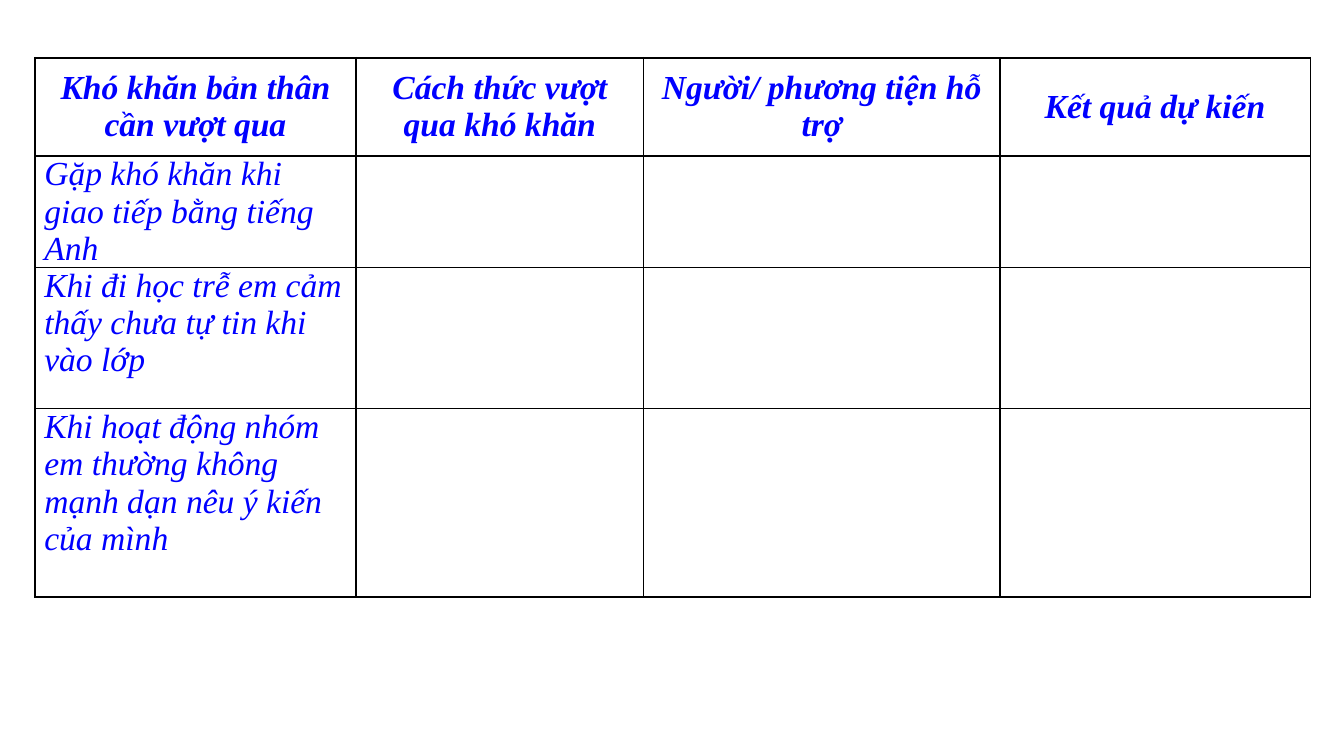
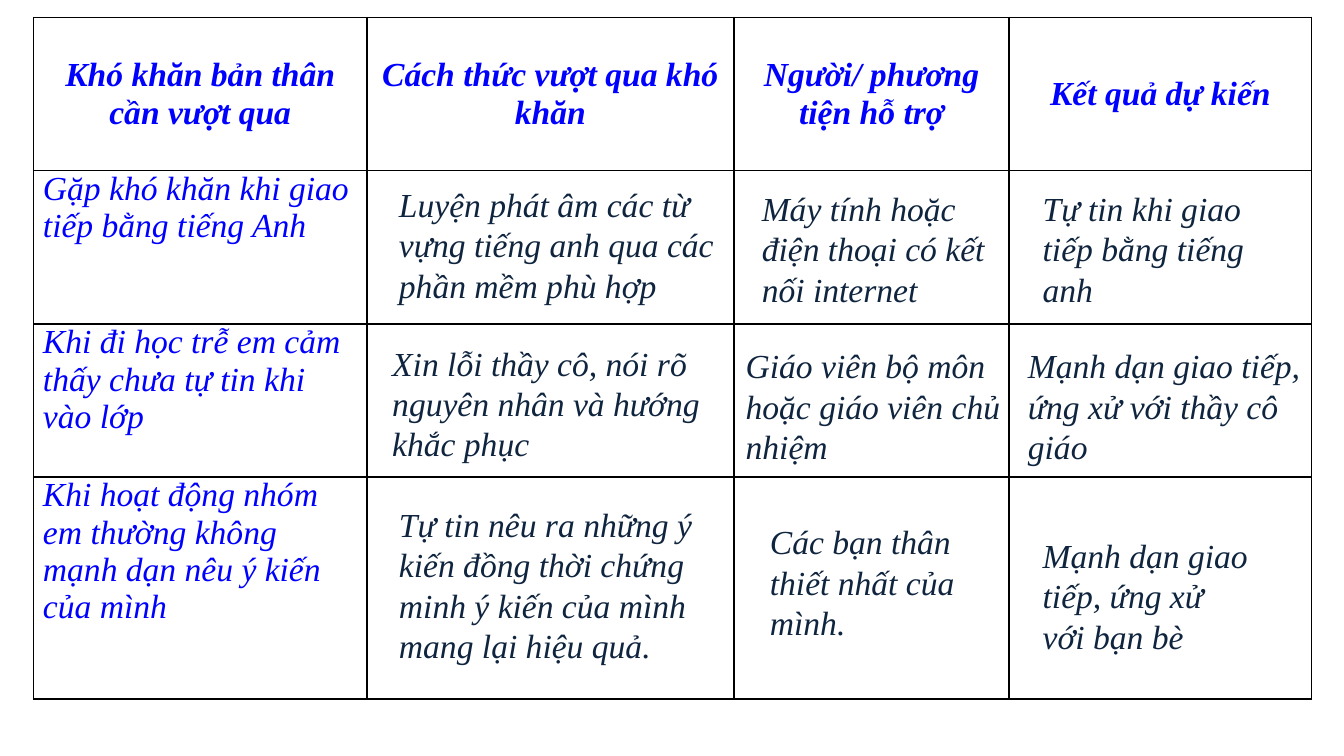
"""Build two slides about overcoming personal difficulties: a blank worksheet and a completed one."""
from dataclasses import dataclass

from lxml import etree
from pptx import Presentation
from pptx import util as u
from pptx.dml.color import RGBColor
from pptx.enum import text
from pptx.oxml.ns import qn


@dataclass(frozen=True)
class Theme:
    font: str = "Times New Roman"
    size: int = 18
    blue: str = "0000FF"
    navy: str = "0F243E"
    border: str = "000000"
    border_width: int = 1


theme = Theme()


def write_text(frame, content, color=theme.blue, bold=False, align=text.PP_ALIGN.LEFT):
    frame.word_wrap = True
    paragraph = frame.paragraphs[0]
    paragraph.alignment = align
    run = paragraph.add_run()
    run.text = content
    run.font.name = theme.font
    run.font.size = u.Pt(theme.size)
    run.font.bold = bold
    run.font.italic = True
    run.font.color.rgb = RGBColor.from_string(color)


def format_cell(cell):
    cell.fill.background()
    cell.margin_left = cell.margin_right = u.Inches(0.07)
    cell.margin_top = cell.margin_bottom = 0
    properties = cell._tc.get_or_add_tcPr()
    for index, side in enumerate(("lnL", "lnR", "lnT", "lnB")):
        line = etree.Element(qn(f"a:{side}"), w=str(u.Pt(theme.border_width)))
        fill = etree.SubElement(line, qn("a:solidFill"))
        etree.SubElement(fill, qn("a:srgbClr"), val=theme.border)
        properties.insert(index, line)


headers = [
    "Khó khăn bản thân cần vượt qua",
    "Cách thức vượt qua khó khăn",
    "Người/ phương tiện hỗ trợ",
    "Kết quả dự kiến",
]
difficulties = [
    "Gặp khó khăn khi giao tiếp bằng tiếng Anh",
    "Khi đi học trễ em cảm thấy chưa tự tin khi vào lớp",
    "Khi hoạt động nhóm em thường không mạnh dạn nêu ý kiến của mình",
]
answers = [
    (2.87, 1.32, 2.55, 1.01, "Luyện phát âm các từ vựng tiếng anh qua các phần mềm phù hợp"),
    (5.57, 1.35, 2.1, 1.01, "Máy tính hoặc điện thoại có kết nối internet"),
    (7.66, 1.35, 2.03, 1.01, "Tự tin khi giao tiếp bằng tiếng anh"),
    (2.82, 2.5, 2.55, 1.01, "Xin lỗi thầy cô, nói rõ nguyên nhân và hướng khắc phục"),
    (5.45, 2.52, 2.1, 1.01, "Giáo viên bộ môn hoặc giáo viên chủ nhiệm"),
    (7.55, 2.52, 2.26, 1.01, "Mạnh dạn giao tiếp, ứng xử với thầy cô giáo"),
    (2.87, 3.7, 2.45, 1.31,
     "Tự tin nêu ra những ý kiến đồng thời chứng minh ý kiến của mình mang lại hiệu quả."),
    (5.63, 3.83, 1.68, 1.01, "Các bạn thân thiết nhất của mình."),
    (7.66, 3.93, 1.73, 1.01, "Mạnh dạn giao tiếp, ứng xử với bạn bè"),
]
worksheets = [
    (0.26, 0.43, [2.39, 2.14, 2.65, 2.31], [0.73, 0.73, 1.05, 1.4], []),
    (0.25, 0.13, [2.48, 2.73, 2.05, 2.25], [1.14, 1.14, 1.14, 1.65], answers),
]

presentation = Presentation()
presentation.slide_width = u.Inches(10)
presentation.slide_height = presentation.slide_width * 9 // 16

for left, top, widths, heights, slide_answers in worksheets:
    slide = presentation.slides.add_slide(presentation.slide_layouts[6])
    table = slide.shapes.add_table(
        len(heights), len(widths), u.Inches(left), u.Inches(top),
        u.Inches(sum(widths)), u.Inches(sum(heights))).table
    table.first_row = table.horz_banding = False
    for column, width in zip(table.columns, widths):
        column.width = u.Inches(width)
    for row, height in zip(table.rows, heights):
        row.height = u.Inches(height)
    for cell in table.iter_cells():
        format_cell(cell)
    for index, header in enumerate(headers):
        cell = table.cell(0, index)
        cell.vertical_anchor = text.MSO_ANCHOR.MIDDLE
        write_text(cell.text_frame, header, bold=True, align=text.PP_ALIGN.CENTER)
    for index, difficulty in enumerate(difficulties, start=1):
        write_text(table.cell(index, 0).text_frame, difficulty)
    for *box, answer in slide_answers:
        shape = slide.shapes.add_textbox(*map(u.Inches, box))
        write_text(shape.text_frame, answer, color=theme.navy)
        shape.text_frame.auto_size = text.MSO_AUTO_SIZE.SHAPE_TO_FIT_TEXT

presentation.save("out.pptx")
